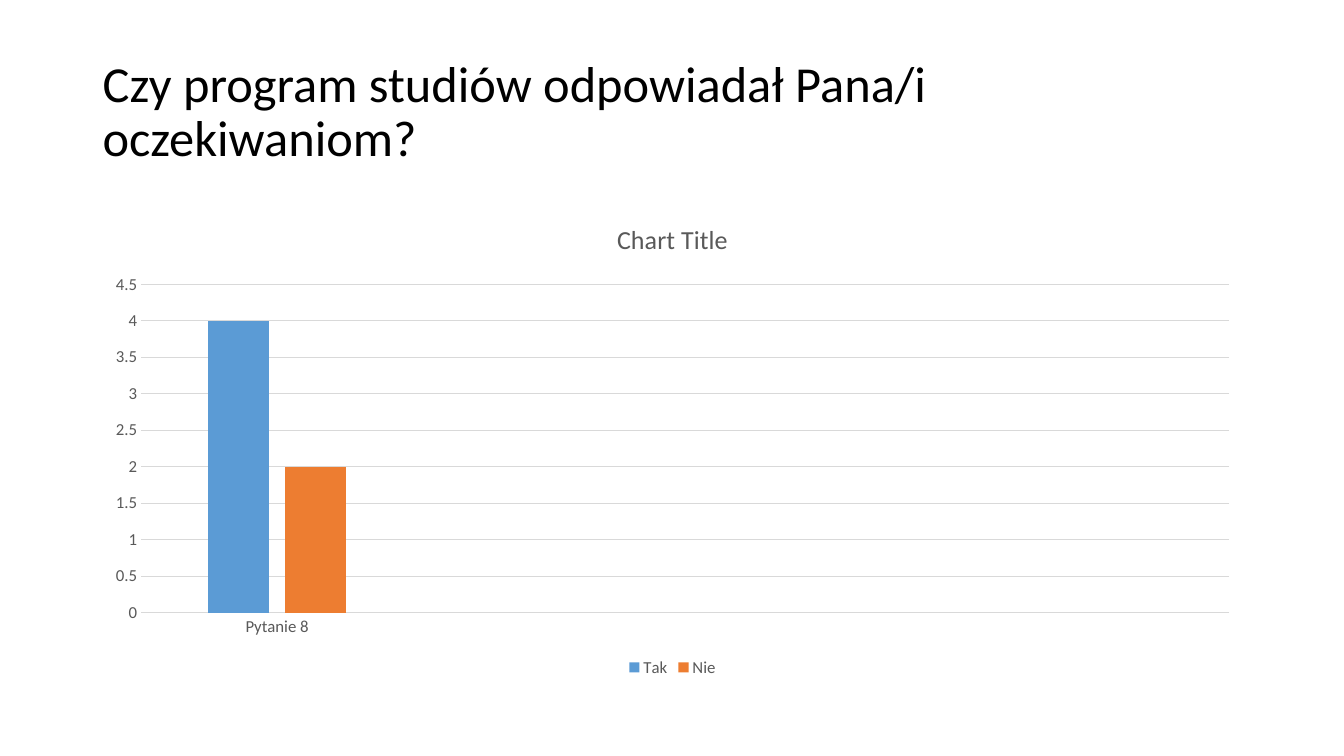
"""Builds a survey slide: a question above a clustered column chart of the answers."""
from pptx import Presentation
from pptx.chart.data import CategoryChartData as ChartData
from pptx.dml.color import RGBColor as RGB
from pptx.enum.chart import XL_CHART_TYPE as ChartType
from pptx.enum.chart import XL_LEGEND_POSITION as LegendPosition
from pptx.enum.chart import XL_TICK_MARK as TickMark
from pptx.enum.text import MSO_ANCHOR as Anchor
from pptx.util import Inches, Pt

QUESTION = "Czy program studiów odpowiadał Pana/i oczekiwaniom?"
CHART_TITLE = "Chart Title"
CATEGORIES = ["Pytanie 8", "", "", ""]
ANSWERS = {"Tak": [4, None, None, None], "Nie": [2, None, None, None]}

SLIDE_SIZE = (13.33, 7.5)
LEFT, WIDTH = 0.92, 11.5
QUESTION_BOX = (LEFT, 0.4, WIDTH, 1.45)
CHART_BOX = (LEFT, 2, WIDTH, 4.76)

THEME = {
    "font": "Calibri",
    "ink": RGB.from_string("000000"),
    "label": RGB.from_string("595959"),
    "rule": RGB.from_string("D9D9D9"),
    "answers": [RGB.from_string("5B9BD5"), RGB.from_string("ED7D31")],
    "question_size": 36,
    "title_size": 18.6,
    "label_size": 12,
    "rule_width": 0.75,
}


def apply(target, values):
    for name, value in values.items():
        setattr(target, name, value)


def style_font(font, size, color):
    apply(font, {"name": THEME["font"], "size": Pt(size), "bold": False})
    font.color.rgb = color


def style_rule(line):
    line.color.rgb = THEME["rule"]
    line.width = Pt(THEME["rule_width"])


def add_question(slide):
    frame = slide.shapes.add_textbox(*map(Inches, QUESTION_BOX)).text_frame
    apply(frame, {"word_wrap": True, "vertical_anchor": Anchor.MIDDLE})
    paragraph = frame.paragraphs[0]
    paragraph.line_spacing = 0.9
    run = paragraph.add_run()
    run.text = QUESTION
    style_font(run.font, THEME["question_size"], THEME["ink"])


def add_answers(slide):
    answers = ChartData()
    answers.categories = CATEGORIES
    for name, counts in ANSWERS.items():
        answers.add_series(name, counts)
    chart = slide.shapes.add_chart(
        ChartType.COLUMN_CLUSTERED, *map(Inches, CHART_BOX), answers).chart
    style_font(chart.font, THEME["label_size"], THEME["label"])

    title = chart.chart_title.text_frame.paragraphs[0].add_run()
    title.text = CHART_TITLE
    style_font(title.font, THEME["title_size"], THEME["label"])

    chart.has_legend = True
    apply(chart.legend, {"position": LegendPosition.BOTTOM, "include_in_layout": False})
    style_font(chart.legend.font, THEME["label_size"], THEME["label"])

    for axis in (chart.category_axis, chart.value_axis):
        apply(axis, {"major_tick_mark": TickMark.NONE, "minor_tick_mark": TickMark.NONE})
        style_font(axis.tick_labels.font, THEME["label_size"], THEME["label"])
    style_rule(chart.category_axis.format.line)
    chart.value_axis.format.line.fill.background()
    style_rule(chart.value_axis.major_gridlines.format.line)

    plot = chart.plots[0]
    apply(plot, {"gap_width": 219, "overlap": -27, "vary_by_categories": False})
    for series, color in zip(plot.series, THEME["answers"]):
        series.format.fill.solid()
        series.format.fill.fore_color.rgb = color


def main():
    deck = Presentation()
    deck.slide_width, deck.slide_height = map(Inches, SLIDE_SIZE)
    slide = deck.slides.add_slide(deck.slide_layouts[6])
    add_question(slide)
    add_answers(slide)
    deck.save("out.pptx")


if __name__ == "__main__":
    main()
